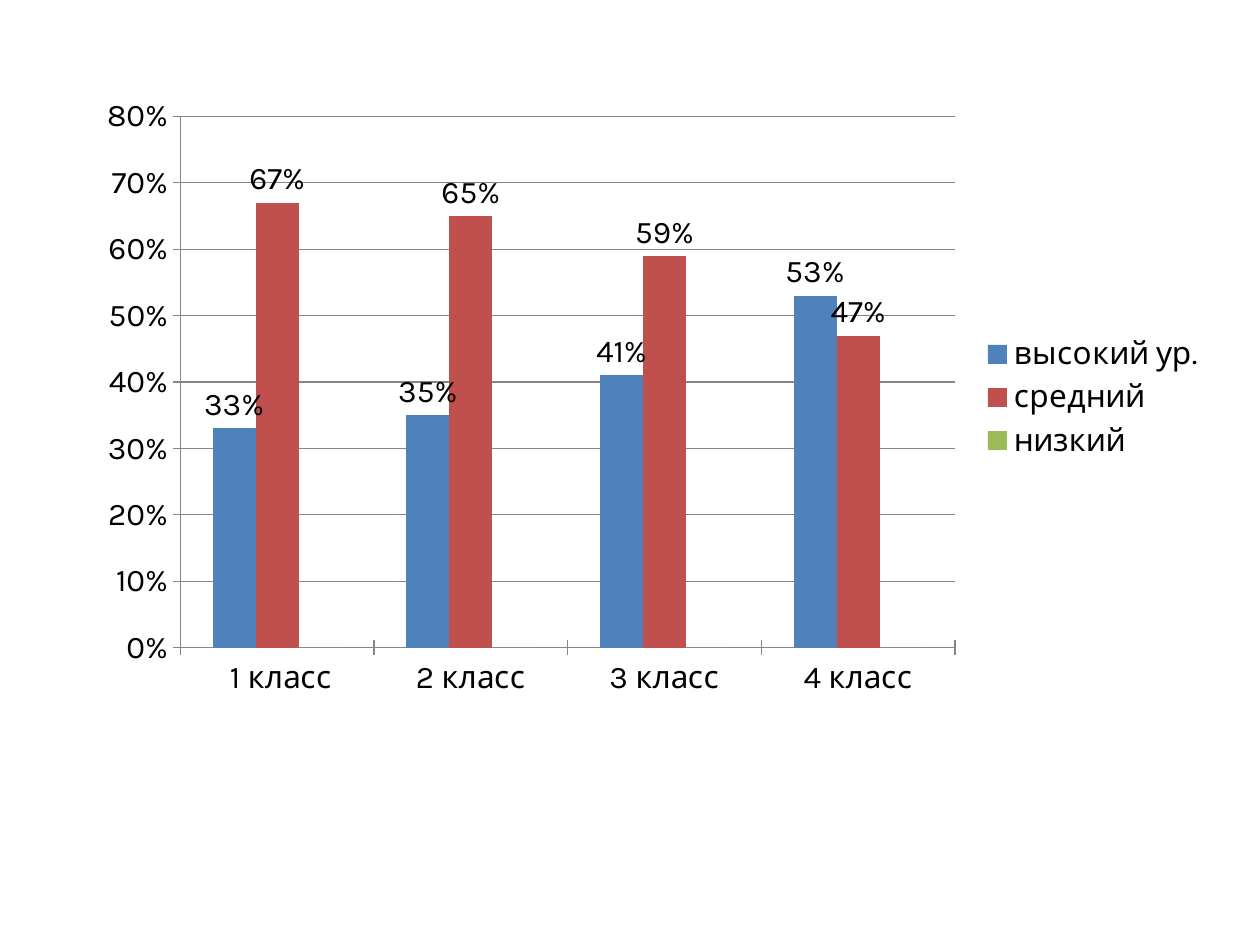
from pptx import Presentation
from pptx import util as u
from pptx.chart.data import CategoryChartData
from pptx.dml.color import RGBColor
from pptx.enum import chart as ch

FONT = "Karla"
GRAY = "868686"
CLASSES = [" 1 класс", "2 класс", "3 класс", "4 класс"]
# name, values, colour, labels shown
LEVELS = [
    ("высокий ур.", (0.33, 0.35, 0.41, 0.53), "4F81BD", True),
    ("средний", (0.67, 0.65, 0.59, 0.47), "C0504D", True),
    ("низкий", (0, 0, 0, 0), "9BBB59", False),
]


def rgb(value):
    return RGBColor.from_string(value)


def style_axis(axis):
    axis.major_tick_mark = ch.XL_TICK_MARK.CROSS
    axis.format.line.color.rgb = rgb(GRAY)
    axis.format.line.width = u.Pt(0.75)


def add_level_chart(s, left, top, width, height):
    data = CategoryChartData(number_format="0%")
    data.categories = CLASSES
    for name, values, _, _ in LEVELS:
        data.add_series(name, values)
    chart = s.shapes.add_chart(ch.XL_CHART_TYPE.COLUMN_CLUSTERED,
                               left, top, width, height, data).chart
    chart.has_title = False
    chart.font.name = FONT
    chart.font.size = u.Pt(18)
    chart.font.color.rgb = rgb("000000")

    # Axes and gridlines
    style_axis(chart.category_axis)
    axis = chart.value_axis
    style_axis(axis)
    axis.minimum_scale, axis.maximum_scale, axis.major_unit = 0, 0.8, 0.1
    axis.tick_labels.number_format = "0%"
    axis.tick_labels.number_format_is_linked = False
    axis.has_major_gridlines = True
    axis.major_gridlines.format.line.color.rgb = rgb(GRAY)
    axis.major_gridlines.format.line.width = u.Pt(0.75)

    # Legend
    chart.has_legend = True
    chart.legend.position = ch.XL_LEGEND_POSITION.RIGHT
    chart.legend.include_in_layout = False

    # Columns and their labels
    plot = chart.plots[0]
    plot.vary_by_categories = False
    plot.gap_width = 150
    plot.overlap = 0
    for series, (_, _, color, labelled) in zip(plot.series, LEVELS):
        series.format.fill.solid()
        series.format.fill.fore_color.rgb = rgb(color)
        if labelled:
            labels = series.data_labels
            labels.show_value = True
            labels.number_format = "0%"
            labels.number_format_is_linked = False
            labels.position = ch.XL_LABEL_POSITION.OUTSIDE_END


def main():
    prs = Presentation()
    prs.slide_width, prs.slide_height = u.Inches(10), u.Inches(7.5)
    s = prs.slides.add_slide(prs.slide_layouts[6])
    add_level_chart(s, u.Inches(0.67), u.Inches(0.68), u.Inches(9), u.Inches(4.95))
    prs.save("out.pptx")


if __name__ == "__main__":
    main()
